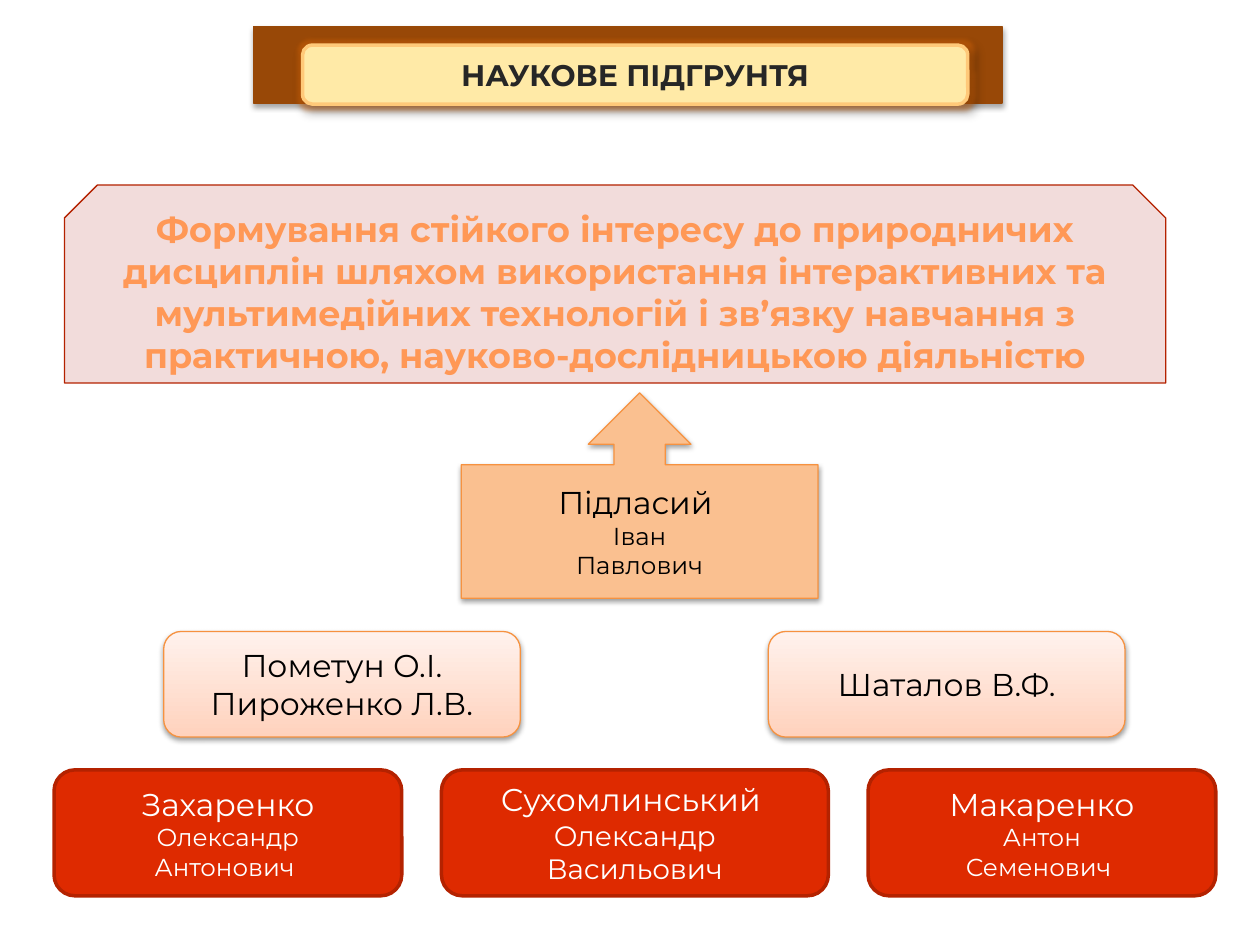
from lxml.etree import SubElement
from pptx import Presentation
from pptx.dml.color import RGBColor
from pptx.enum.shapes import MSO_SHAPE as Shape
from pptx.enum.text import MSO_ANCHOR as Anchor, MSO_AUTO_SIZE as AutoSize, PP_ALIGN as Align
from pptx.oxml.ns import qn
from pptx.util import Cm, Pt

FONT = "Montserrat"
BLACK = RGBColor(0x00, 0x00, 0x00)
WHITE = RGBColor(0xFF, 0xFF, 0xFF)
CHARCOAL = RGBColor(0x26, 0x26, 0x26)
BROWN = RGBColor(0x98, 0x48, 0x07)
CREAM = RGBColor(0xFF, 0xEA, 0xA7)
GOLD = RGBColor(0xFF, 0xC9, 0x79)
GLOW = RGBColor(0xE4, 0x6C, 0x0A)
RED = RGBColor(0xDE, 0x2A, 0x00)
DARK_RED = RGBColor(0xB4, 0x22, 0x00)
ORANGE = RGBColor(0xF6, 0x92, 0x40)
APRICOT = RGBColor(0xFA, 0xC0, 0x90)
PEACH = RGBColor(0xFF, 0xD2, 0xBD)
PALE_PEACH = RGBColor(0xFF, 0xF2, 0xED)
PINK = RGBColor(0xF2, 0xDC, 0xDB)
CORAL = RGBColor(0xFF, 0x98, 0x56)


def add_effect(sp, kind, color, alpha, **attrs):
    effects = sp._element.spPr.find(qn("a:effectLst"))
    effect = SubElement(effects, qn(f"a:{kind}"), {k: str(v) for k, v in attrs.items()})
    clr = SubElement(effect, qn("a:srgbClr"), val=str(color))
    SubElement(clr, qn("a:alpha"), val=str(alpha * 1000))


def add_shadow(sp, alpha=38, blur=3.1, dist=1.6, angle=90):
    add_effect(sp, "outerShdw", BLACK, alpha, blurRad=Pt(blur), dist=Pt(dist),
               dir=angle * 60000, rotWithShape=0)


def add_block(shapes, kind, box, fill, line, width=0.75):
    sp = shapes.add_shape(kind, *(Cm(v) for v in box))
    sp.shadow.inherit = False
    if isinstance(fill, RGBColor):
        sp.fill.solid()
        sp.fill.fore_color.rgb = fill
    else:
        sp.fill.gradient()
        sp.fill.gradient_angle = 90
        for stop, color in zip(sp.fill.gradient_stops, fill):
            stop.color.rgb = color
    sp.line.color.rgb = line
    sp.line.width = Pt(width)
    return sp


def write(sp, lines, color, bold=False, anchor=Anchor.MIDDLE):
    tf = sp.text_frame
    tf.word_wrap = True
    tf.vertical_anchor = anchor
    for i, (text, size) in enumerate(lines):
        p = tf.add_paragraph() if i else tf.paragraphs[0]
        p.alignment = Align.CENTER
        r = p.add_run()
        r.text = text
        r.font.name = FONT
        r.font.size = Pt(size)
        r.font.bold = bold
        r.font.color.rgb = color


def add_title(s, x, y, w, h):
    group = s.shapes.add_group_shape()
    band = add_block(group.shapes, Shape.RECTANGLE, (x, y, w, h), BROWN, BROWN)
    add_shadow(band, alpha=35, dist=1.8)
    plate_box = (x + 0.99, y + 0.38, w - 1.68, h - 0.36)
    plate = add_block(group.shapes, Shape.ROUNDED_RECTANGLE, plate_box, CREAM, GOLD, 2)
    add_effect(plate, "glow", GLOW, 40, rad=Pt(5))
    add_shadow(plate, alpha=40, blur=4, dist=3, angle=45)
    write(plate, [("НАУКОВЕ ПІДГРУНТЯ", 17)], CHARCOAL, bold=True)


def add_goal(s, *box):
    sp = add_block(s.shapes, Shape.SNIP_2_SAME_RECTANGLE, box, PINK, DARK_RED)
    goal = ("Формування стійкого інтересу до природничих дисциплін шляхом "
            "використання інтерактивних та мультимедійних технологій і зв’язку "
            "навчання з практичною, науково-дослідницькою діяльністю")
    write(sp, [(goal, 20)], CORAL, bold=True, anchor=Anchor.TOP)
    sp.text_frame.auto_size = AutoSize.SHAPE_TO_FIT_TEXT


def add_leader(s, *box):
    sp = add_block(s.shapes, Shape.UP_ARROW_CALLOUT, box, APRICOT, ORANGE)
    add_shadow(sp)
    write(sp, [("Підласий ", 18), ("Іван", 14), ("Павлович", 14)], BLACK)


def add_authors(s, x, y, w, h):
    card_w = 7.19
    cards = [(x, ["Пометун О.І.", "Пироженко Л.В."]), (x + w - card_w, ["Шаталов В.Ф."])]
    for left, names in cards:
        sp = add_block(s.shapes, Shape.ROUNDED_RECTANGLE, (left, y, card_w, h),
                       (PEACH, PALE_PEACH), ORANGE)
        add_shadow(sp)
        write(sp, [(name, 18) for name in names], BLACK)


def add_classics(s, x, y, w, h):
    gap = 0.8
    side_w = 7.01
    middle_w = w - 2 * (side_w + gap)
    cards = [
        (side_w, 14, "Захаренко", "Олександр", "Антонович "),
        (middle_w, 16, "Сухомлинський ", "Олександр", "Васильович"),
        (side_w, 14, "Макаренко", "Антон", "Семенович "),
    ]
    for card_w, size, surname, *names in cards:
        sp = add_block(s.shapes, Shape.ROUNDED_RECTANGLE, (x, y, card_w, h), RED, DARK_RED, 2)
        write(sp, [(surname, 18)] + [(name, size) for name in names], WHITE)
        x += card_w + gap


def main():
    prs = Presentation()
    prs.slide_width, prs.slide_height = Cm(25.4), Cm(19.05)
    s = prs.slides.add_slide(prs.slide_layouts[6])
    add_title(s, 5.11, 0.53, 15.09, 1.55)
    add_classics(s, 1.09, 15.52, 23.42, 2.54)
    add_authors(s, 3.3, 12.73, 19.38, 2.13)
    add_leader(s, 9.3, 7.92, 7.19, 4.14)
    add_goal(s, 1.3, 3.73, 22.2, 3.99)
    prs.save("out.pptx")


if __name__ == "__main__":
    main()
